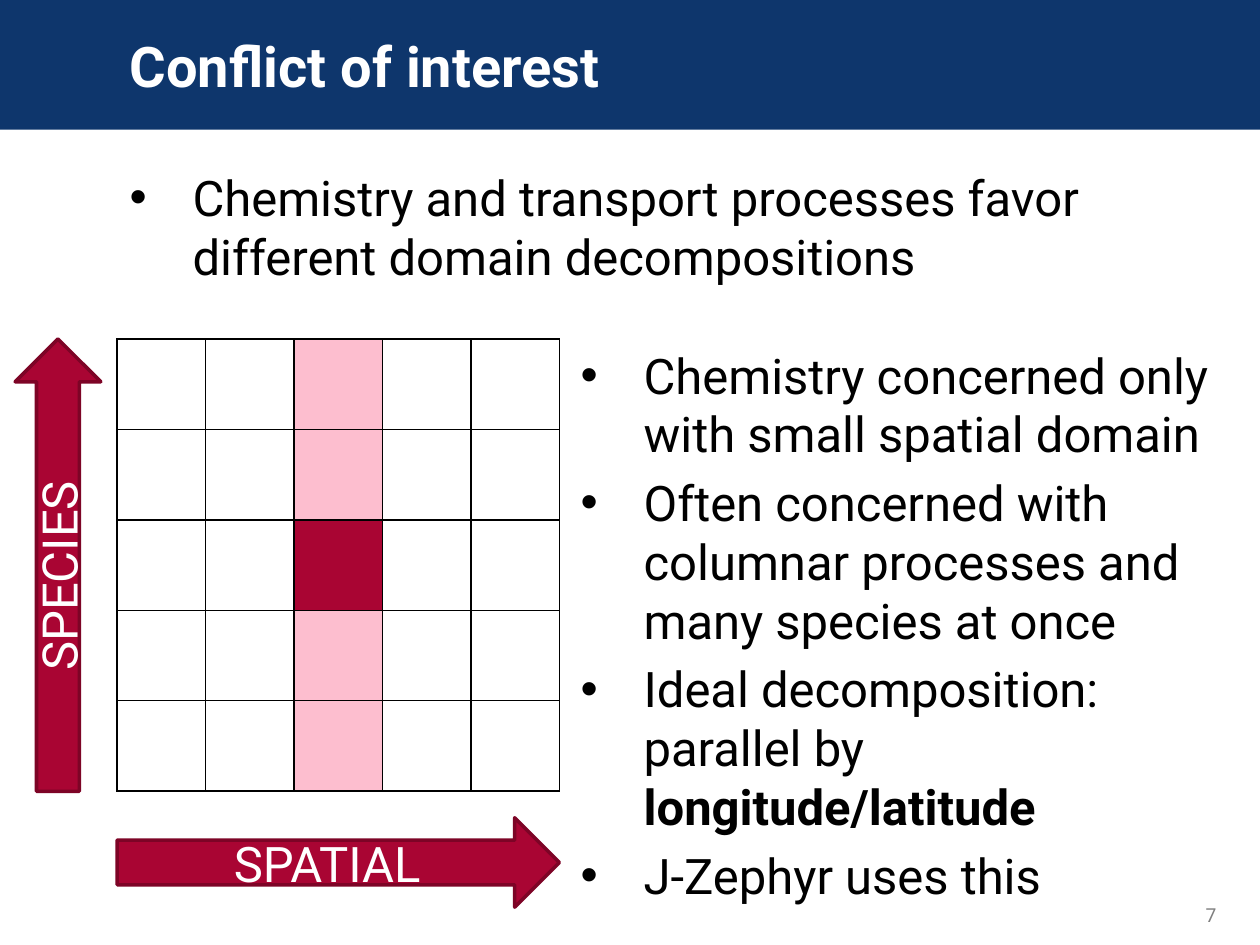
from dataclasses import dataclass

from lxml import etree
from pptx import Presentation
from pptx.dml.color import RGBColor
from pptx.enum.shapes import MSO_SHAPE
from pptx.enum.text import MSO_ANCHOR, PP_ALIGN
from pptx.oxml.ns import qn
from pptx.util import Inches, Pt

RECTANGLE, RIGHT_ARROW, UP_ARROW = (
    MSO_SHAPE.RECTANGLE, MSO_SHAPE.RIGHT_ARROW, MSO_SHAPE.UP_ARROW)
TOP, MIDDLE, BOTTOM = MSO_ANCHOR.TOP, MSO_ANCHOR.MIDDLE, MSO_ANCHOR.BOTTOM
LEFT, CENTER = PP_ALIGN.LEFT, PP_ALIGN.CENTER

WIDTH, HEIGHT = 10, 7.5
FONT = "Roboto"
NAVY, WHITE, BLACK, GRAY = "0E366C", "FFFFFF", "000000", "808080"
CRIMSON, DARK_CRIMSON, PINK = "A90533", "7D0426", "FDBECF"

GRID_SIZE = 5
FOCUS = GRID_SIZE // 2
MARGIN, GRID_TOP = 0.93, 2.69
GRID_WIDTH, GRID_HEIGHT = 3.51, 3.59
RIGHT_EDGE = 9.79


@dataclass(frozen=True)
class Box:
    left: float
    top: float
    width: float
    height: float

    def emu(self) -> tuple:
        return tuple(Inches(v) for v in (self.left, self.top, self.width, self.height))


@dataclass(frozen=True)
class AxisArrow:
    label: str
    preset: MSO_SHAPE
    box: Box
    direction: str


AXES = (
    AxisArrow("SPATIAL", RIGHT_ARROW, Box(MARGIN, 6.49, GRID_WIDTH, 0.71), "horz"),
    AxisArrow("SPECIES", UP_ARROW, Box(0.12, GRID_TOP, 0.68, GRID_HEIGHT), "vert270"),
)

# Each point is a list of (text, bold) runs.
SUMMARY = [
    [("Chemistry and transport processes favor different domain decompositions", False)],
]
CHEMISTRY_POINTS = [
    [("Chemistry concerned only with small spatial domain", False)],
    [("Often concerned with columnar processes and many species at once", False)],
    [("Ideal decomposition: parallel by ", False), ("longitude/latitude", True)],
    [("J-Zephyr uses this", False)],
]


def color(value: str) -> RGBColor:
    return RGBColor.from_string(value)


def add_bullet(paragraph) -> None:
    properties = paragraph._p.get_or_add_pPr()
    properties.set("marL", str(Inches(0.5)))
    properties.set("indent", str(Inches(-0.5)))
    etree.SubElement(properties, qn("a:buFont"), typeface="Arial")
    etree.SubElement(properties, qn("a:buChar"), char="•")


def write(frame, points: list, *, size: float = 28, ink: str = BLACK,
          anchor=TOP, align=LEFT, bullets: bool = False) -> None:
    frame.word_wrap = True
    frame.vertical_anchor = anchor
    for index, runs in enumerate(points):
        paragraph = frame.add_paragraph() if index else frame.paragraphs[0]
        if bullets:
            add_bullet(paragraph)
        paragraph.alignment = align
        if index:
            paragraph.space_before = Pt(0.2 * size)
        for text, bold in runs:
            run = paragraph.add_run()
            run.text = text
            run.font.name = FONT
            run.font.size = Pt(size)
            run.font.bold = bold
            run.font.color.rgb = color(ink)


def add_text(slide, box: Box, points: list, **text_format) -> None:
    write(slide.shapes.add_textbox(*box.emu()).text_frame, points, **text_format)


def add_filled(slide, preset, box: Box, fill: str, line: str = ""):
    shape = slide.shapes.add_shape(preset, *box.emu())
    shape.shadow.inherit = False
    shape.fill.solid()
    shape.fill.fore_color.rgb = color(fill)
    if line:
        shape.line.color.rgb = color(line)
        shape.line.width = Pt(2)
    else:
        shape.line.fill.background()
    return shape


def add_axis(slide, axis: AxisArrow) -> None:
    arrow = add_filled(slide, axis.preset, axis.box, CRIMSON, DARK_CRIMSON)
    arrow.text_frame._txBody.bodyPr.set("vert", axis.direction)
    write(arrow.text_frame, [[(axis.label, False)]],
          ink=WHITE, anchor=MIDDLE, align=CENTER)


def add_borders(cell) -> None:
    """Insert the borders ahead of the fill, as the schema orders them."""
    properties = cell._tc.get_or_add_tcPr()
    for position, side in enumerate(("a:lnL", "a:lnR", "a:lnT", "a:lnB")):
        border = etree.Element(qn(side), w=str(Pt(1)))
        solid = etree.SubElement(border, qn("a:solidFill"))
        etree.SubElement(solid, qn("a:srgbClr"), val=BLACK)
        properties.insert(position, border)


def cell_fill(row: int, column: int) -> str:
    if column != FOCUS:
        return WHITE
    return CRIMSON if row == FOCUS else PINK


def add_domain_grid(slide, box: Box) -> None:
    table = slide.shapes.add_table(GRID_SIZE, GRID_SIZE, *box.emu()).table
    table.first_row = table.horz_banding = False
    for column in table.columns:
        column.width = Inches(box.width / GRID_SIZE)
    for row_index, row in enumerate(table.rows):
        row.height = Inches(box.height / GRID_SIZE)
        for column_index, cell in enumerate(row.cells):
            cell.fill.solid()
            cell.fill.fore_color.rgb = color(cell_fill(row_index, column_index))
            add_borders(cell)


def main() -> None:
    deck = Presentation()
    deck.slide_width, deck.slide_height = Inches(WIDTH), Inches(HEIGHT)
    slide = deck.slides.add_slide(deck.slide_layouts[6])

    add_filled(slide, RECTANGLE, Box(0, 0, WIDTH, 1.03), NAVY)
    add_text(slide, Box(9.47, 7.12, 0.46, 0.29), [[("7", False)]], size=11, ink=GRAY)
    add_text(slide, Box(MARGIN, 0.18, RIGHT_EDGE - MARGIN, 0.65),
             [[("Conflict of interest", True)]], size=32, ink=WHITE, anchor=BOTTOM)
    add_text(slide, Box(MARGIN, 1.28, 8.33, 1.09), SUMMARY, bullets=True)
    add_domain_grid(slide, Box(MARGIN, GRID_TOP, GRID_WIDTH, GRID_HEIGHT))
    add_text(slide, Box(4.51, GRID_TOP, RIGHT_EDGE - 4.51, 4.26),
             CHEMISTRY_POINTS, bullets=True)
    for axis in AXES:
        add_axis(slide, axis)

    deck.save("out.pptx")


if __name__ == "__main__":
    main()
